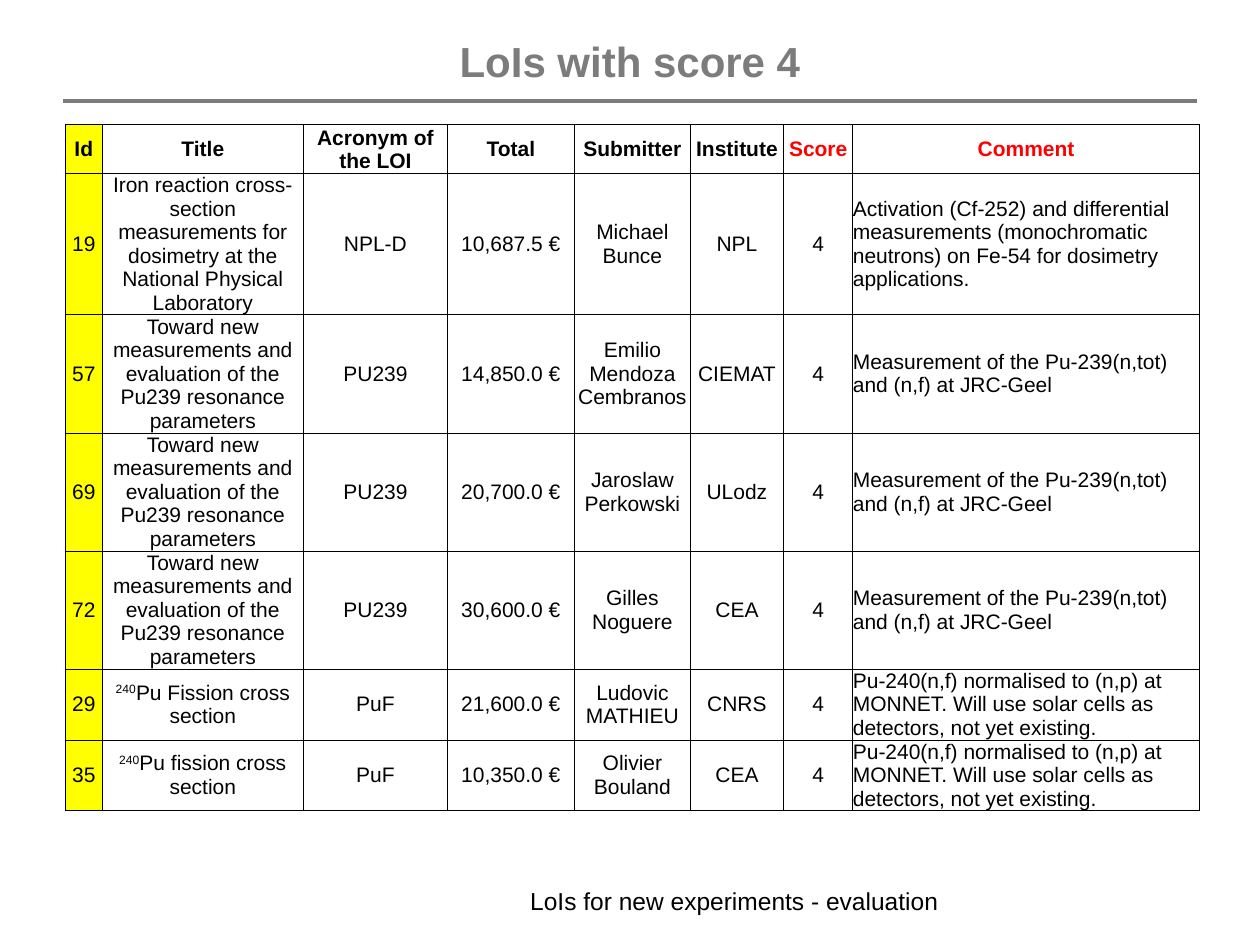
import pptx
import pptx.util
import pptx.dml.color
import pptx.enum.shapes
import pptx.enum.text
import pptx.oxml.ns
from lxml import etree

COLS, ROWS = 20, 15
UNIT = pptx.util.Inches(0.5)
HUES = {"ink": "000000", "grey": "7C7C7D", "red": "FF0000", "gold": "FFFF00"}
ALIGN = pptx.enum.text.PP_ALIGN
MID = pptx.enum.text.MSO_ANCHOR.MIDDLE

WIDTHS = [0.58, 3.2, 2.28, 2.02, 1.84, 1.48, 1.1, 5.5]
LINES = [2, 6, 5, 5, 5, 3, 3]
STEP = 3 / 8

HEADS = ["Id", "Title", "Acronym of the LOI", "Total", "Submitter",
         "Institute", "Score", "Comment"]
TOWARD = "Toward new measurements and evaluation of the Pu239 resonance parameters"
GEEL = "Measurement of the Pu-239(n,tot) and (n,f) at JRC-Geel"
MONNET = ("Pu-240(n,f) normalised to (n,p) at MONNET. "
          "Will use solar cells as detectors, not yet existing.")
IRON = ("Iron reaction cross-section measurements for dosimetry "
        "at the National Physical Laboratory")
DOSE = ("Activation (Cf-252) and differential measurements "
        "(monochromatic neutrons) on Fe-54 for dosimetry applications.")
LOIS = [
    ["19", IRON, "NPL-D", "10,687.5 €", "Michael Bunce", "NPL", "4", DOSE],
    ["57", TOWARD, "PU239", "14,850.0 €", "Emilio Mendoza Cembranos", "CIEMAT", "4", GEEL],
    ["69", TOWARD, "PU239", "20,700.0 €", "Jaroslaw Perkowski", "ULodz", "4", GEEL],
    ["72", TOWARD, "PU239", "30,600.0 €", "Gilles Noguere", "CEA", "4", GEEL],
    ["29", "Pu Fission cross section", "PuF", "21,600.0 €", "Ludovic MATHIEU", "CNRS", "4", MONNET],
    ["35", "Pu fission cross section", "PuF", "10,350.0 €", "Olivier Bouland", "CEA", "4", MONNET],
]


def span(*cells):
    return [round(cell * UNIT) for cell in cells]


def tint(name):
    return pptx.dml.color.RGBColor.from_string(HUES[name])


def write(frame, text, size=12, hue="ink", bold=False, align=ALIGN.CENTER, sup=""):
    para = frame.paragraphs[0]
    para.alignment = align
    for part, shift in ((sup, "30000"), (text, "0")):
        if not part:
            continue
        run = para.add_run()
        run.text = part
        run.font.name = "Arial"
        run.font.size = pptx.util.Pt(size)
        run.font.bold = bold
        run.font.color.rgb = tint(hue)
        if shift != "0":
            run.font._element.set("baseline", shift)


def edge(cell, width=0.5):
    props = cell._tc.get_or_add_tcPr()
    for side in ("a:lnL", "a:lnR", "a:lnT", "a:lnB"):
        line = etree.SubElement(props, pptx.oxml.ns.qn(side), w=str(pptx.util.Pt(width)))
        fill = etree.SubElement(line, pptx.oxml.ns.qn("a:solidFill"))
        etree.SubElement(fill, pptx.oxml.ns.qn("a:srgbClr"), val=HUES["ink"])


def add_head(slide, left, top, width, height):
    title = slide.shapes.title
    title.left, title.top, title.width, title.height = span(left, top, width, 0.75 * height)
    frame = title.text_frame
    frame.margin_top = frame.margin_bottom = 0
    frame.vertical_anchor = MID
    write(frame, "LoIs with score 4", size=24, hue="grey", bold=True)
    base = top + height
    rule = slide.shapes.add_connector(
        pptx.enum.shapes.MSO_CONNECTOR.STRAIGHT, *span(left, base, left + width, base))
    rule.line.color.rgb = tint("grey")
    rule.line.width = pptx.util.Pt(2)
    etree.SubElement(rule._element.spPr, pptx.oxml.ns.qn("a:effectLst"))


def add_grid(slide, left, top, width, height):
    data = [HEADS] + LOIS
    grid = slide.shapes.add_table(
        len(data), len(HEADS), *span(left, top, width, height)).table
    grid.first_row = grid.horz_banding = False
    for col, share in zip(grid.columns, WIDTHS):
        col.width = round(share / sum(WIDTHS) * width * UNIT)
    for row, count in zip(grid.rows, LINES):
        row.height = round(count / sum(LINES) * height * UNIT)
    for r, row in enumerate(data):
        for c, text in enumerate(row):
            fill_cell(grid.cell(r, c), text, HEADS[c], r == 0)


def fill_cell(cell, text, head, top):
    inset = pptx.util.Inches(0.01 if top else 0)
    cell.margin_left = cell.margin_right = cell.margin_top = inset
    cell.margin_bottom = 0
    cell.vertical_anchor = MID
    edge(cell)
    if head == "Id":
        cell.fill.solid()
        cell.fill.fore_color.rgb = tint("gold")
    else:
        cell.fill.background()
    write(cell.text_frame, text, bold=top,
          hue="red" if top and head in ("Score", "Comment") else "ink",
          align=ALIGN.LEFT if head == "Comment" and not top else ALIGN.CENTER,
          sup="240" if text.startswith("Pu ") else "")


def add_foot(slide, left, top, width, height):
    frame = slide.shapes.add_textbox(*span(left, top, width, height)).text_frame
    frame.word_wrap = False
    frame.auto_size = pptx.enum.text.MSO_AUTO_SIZE.SHAPE_TO_FIT_TEXT
    write(frame, "LoIs for new experiments - evaluation", size=14, align=ALIGN.LEFT)


def main():
    deck = pptx.Presentation()
    deck.slide_width, deck.slide_height = span(COLS, ROWS)
    slide = deck.slides.add_slide(deck.slide_layouts[5])
    add_head(slide, 1, 0.58, COLS - 2, 1.02)
    add_grid(slide, 1.04, 1.98, COLS - 2, STEP * sum(LINES))
    add_foot(slide, 8.22, 13.96, 6.9, 0.68)
    deck.save("out.pptx")


if __name__ == "__main__":
    main()
